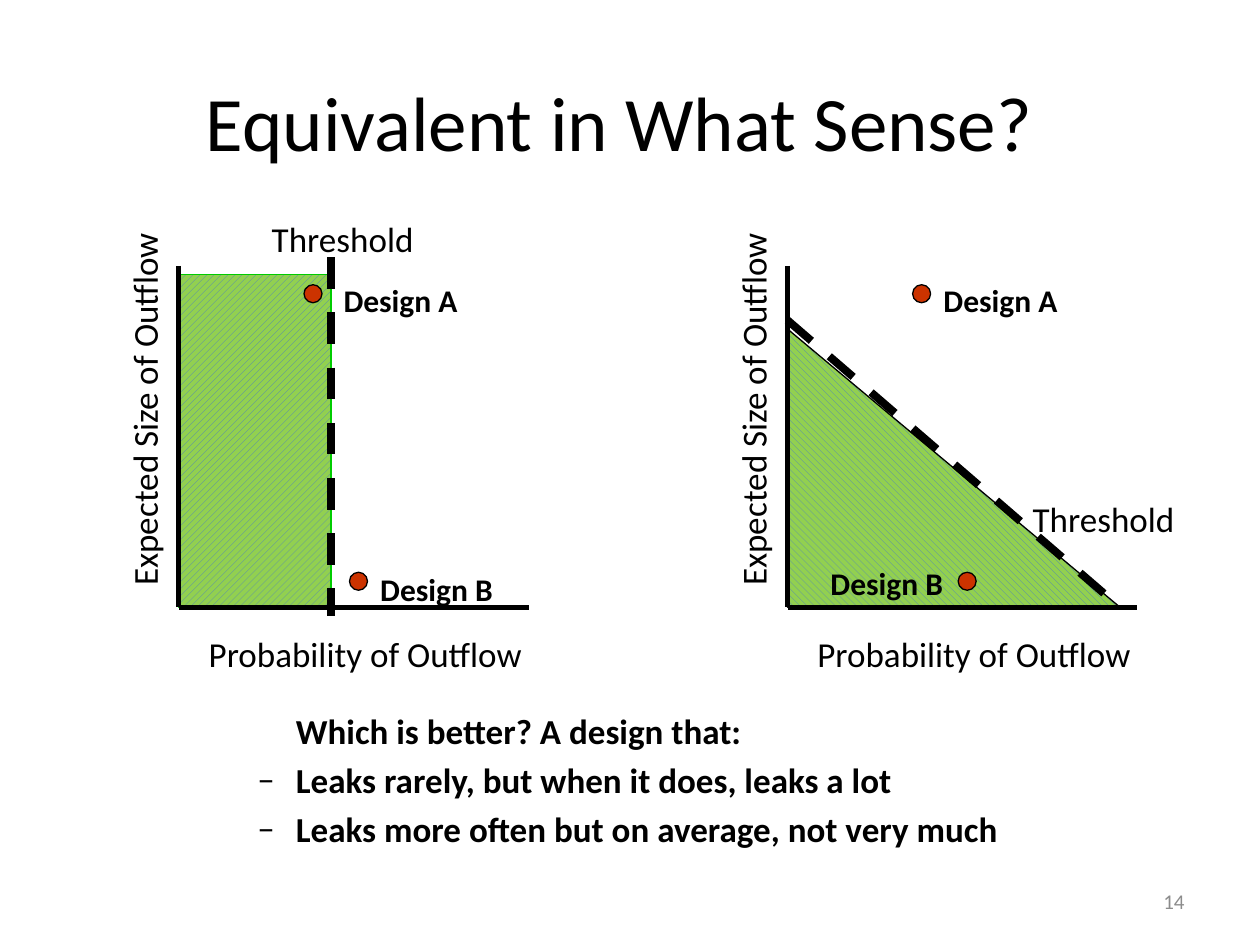
from lxml import etree
from pptx import Presentation
from pptx.dml.color import RGBColor
from pptx.enum import dml, shapes, text
from pptx.oxml.ns import qn
from pptx.util import Pt

THEME = {
    "font": "Calibri",
    "ink": "000000", "grey": "8C8C8C", "dot": "CC3300",
    "hatch": "4F81BD", "zone": "92D050", "edge": "00CC00",
    "title": 44, "label": 20, "name": 18, "page": 12,
    "axis": 3, "limit": 4.5, "thin": 0.75,
}
PAT = dml.MSO_PATTERN
ALIGN = text.PP_ALIGN

# Content
TITLE = "Equivalent in What Sense?"
PAGE = "14"
POINTS = [
    ("Which is better? A design that:", None),
    ("Leaks rarely, but when it does, leaks a lot", "–"),
    ("Leaks more often but on average, not very much", "–"),
]

# Chart parts: x runs from the chart's origin, y from the slide's top
BASE, TOP, WIDE, DOT = 347, 152, 200, 10.3
XLABEL = ("Probability of Outflow", 10, 358, 196.5, 31)
YLABEL = ("Expected Size of Outflow", -131, 215.3, 222, 31)
DOTS = [(97.5, 327), (71.5, 162.7)]
CHARTS = [
    {"left": 102.2,
     "zone": [(0, 157), (0, BASE), (87, BASE), (87, 157)],
     "pattern": PAT.WIDE_UPWARD_DIAGONAL, "edge": "edge",
     "limit": (87, 147, 87, 352),
     "tag": ("Threshold", 46, 121, 96, 31),
     "names": [("Design A", 87, 157, 84, 29), ("Design B", 108, 322, 83, 29)]},
    {"left": 450,
     "zone": [(0, 188), (0, BASE), (190, BASE)],
     "pattern": PAT.WIDE_DOWNWARD_DIAGONAL, "edge": "ink",
     "limit": (0, 183, 190, BASE),
     "tag": ("Threshold", 133, 281, 96, 31),
     "names": [("Design A", 82, 157, 84, 29), ("Design B", 17.5, 318.5, 83, 29)]},
]


def rgb(key):
    return RGBColor.from_string(THEME[key])


def put(obj, **vals):
    for key, val in vals.items():
        setattr(obj, key, val)


def write(para, words, size, color="ink", bold=False, align=ALIGN.LEFT):
    para.alignment = align
    run = para.add_run()
    run.text = words
    put(run.font, name=THEME["font"], size=Pt(THEME[size]), bold=bold)
    run.font.color.rgb = rgb(color)


def add_box(parent, x, y, w, h, wrap=True, anchor=text.MSO_ANCHOR.TOP):
    box = parent.add_textbox(Pt(x), Pt(y), Pt(w), Pt(h))
    put(box.text_frame, word_wrap=wrap, vertical_anchor=anchor)
    return box


def add_label(group, left, part, size="label", bold=False, turn=0):
    words, x, y, w, h = part
    box = add_box(group, left + x, y, w, h, wrap=False)
    box.rotation = turn
    write(box.text_frame.paragraphs[0], words, size, bold=bold)


def add_line(group, left, ends, width, dash=None):
    x1, y1, x2, y2 = ends
    line = group.add_connector(shapes.MSO_CONNECTOR.STRAIGHT, Pt(left + x1),
                               Pt(y1), Pt(left + x2), Pt(y2))
    line.line.color.rgb = rgb("ink")
    put(line.line, width=Pt(THEME[width]), dash_style=dash)
    etree.SubElement(line._element.spPr, qn("a:effectLst"))


def outline(shape, color):
    shape.shadow.inherit = False
    shape.line.color.rgb = rgb(color)
    shape.line.width = Pt(THEME["thin"])


def add_zone(group, chart):
    spots = [(Pt(chart["left"] + x), Pt(y)) for x, y in chart["zone"]]
    pen = group.build_freeform(*spots[0])
    pen.add_line_segments(spots[1:], close=True)
    zone = pen.convert_to_shape()
    zone.fill.patterned()
    zone.fill.pattern = chart["pattern"]
    zone.fill.fore_color.rgb = rgb("hatch")
    zone.fill.back_color.rgb = rgb("zone")
    outline(zone, chart["edge"])


def add_diagram(slide, chart):
    group = slide.shapes.add_group_shape().shapes
    left = chart["left"]
    add_zone(group, chart)
    # Axes and threshold
    add_line(group, left, (0, TOP, 0, BASE), "axis")
    add_line(group, left, (0, BASE, WIDE, BASE), "axis")
    add_line(group, left, chart["limit"], "limit", dml.MSO_LINE.DASH)
    # Axis titles and threshold tag
    add_label(group, left, XLABEL)
    add_label(group, left, YLABEL, turn=270)
    add_label(group, left, chart["tag"])
    # Designs
    for x, y in DOTS:
        dot = group.add_shape(shapes.MSO_SHAPE.OVAL, Pt(left + x), Pt(y),
                              Pt(DOT), Pt(DOT))
        dot.fill.solid()
        dot.fill.fore_color.rgb = rgb("dot")
        outline(dot, "ink")
    for name in chart["names"]:
        add_label(group, left, name, "name", bold=True)


def add_points(slide):
    frame = add_box(slide.shapes, 126, 402, 504, 108).text_frame
    for i, (words, mark) in enumerate(POINTS):
        para = frame.add_paragraph() if i else frame.paragraphs[0]
        para.space_before = Pt(4)
        write(para, words, "label", bold=True)
        props = para._p.get_or_add_pPr()
        props.set("marL", str(Pt(36)))
        props.set("indent", str(Pt(-22 if mark else 0)))
        if mark:
            etree.SubElement(props, qn("a:buFont"), typeface=THEME["font"])
            etree.SubElement(props, qn("a:buChar"), char=mark)


def main():
    deck = Presentation()
    put(deck, slide_width=Pt(720), slide_height=Pt(540))
    slide = deck.slides.add_slide(deck.slide_layouts[6])
    middle = text.MSO_ANCHOR.MIDDLE
    # Page number and title
    page = add_box(slide.shapes, 516, 500.5, 168, 29, anchor=middle)
    write(page.text_frame.paragraphs[0], PAGE, "page", "grey", align=ALIGN.RIGHT)
    title = add_box(slide.shapes, 48, 24, 612, 90, anchor=middle)
    write(title.text_frame.paragraphs[0], TITLE, "title", align=ALIGN.CENTER)
    # Diagrams and question
    for chart in CHARTS:
        add_diagram(slide, chart)
    add_points(slide)
    deck.save("out.pptx")


if __name__ == "__main__":
    main()
